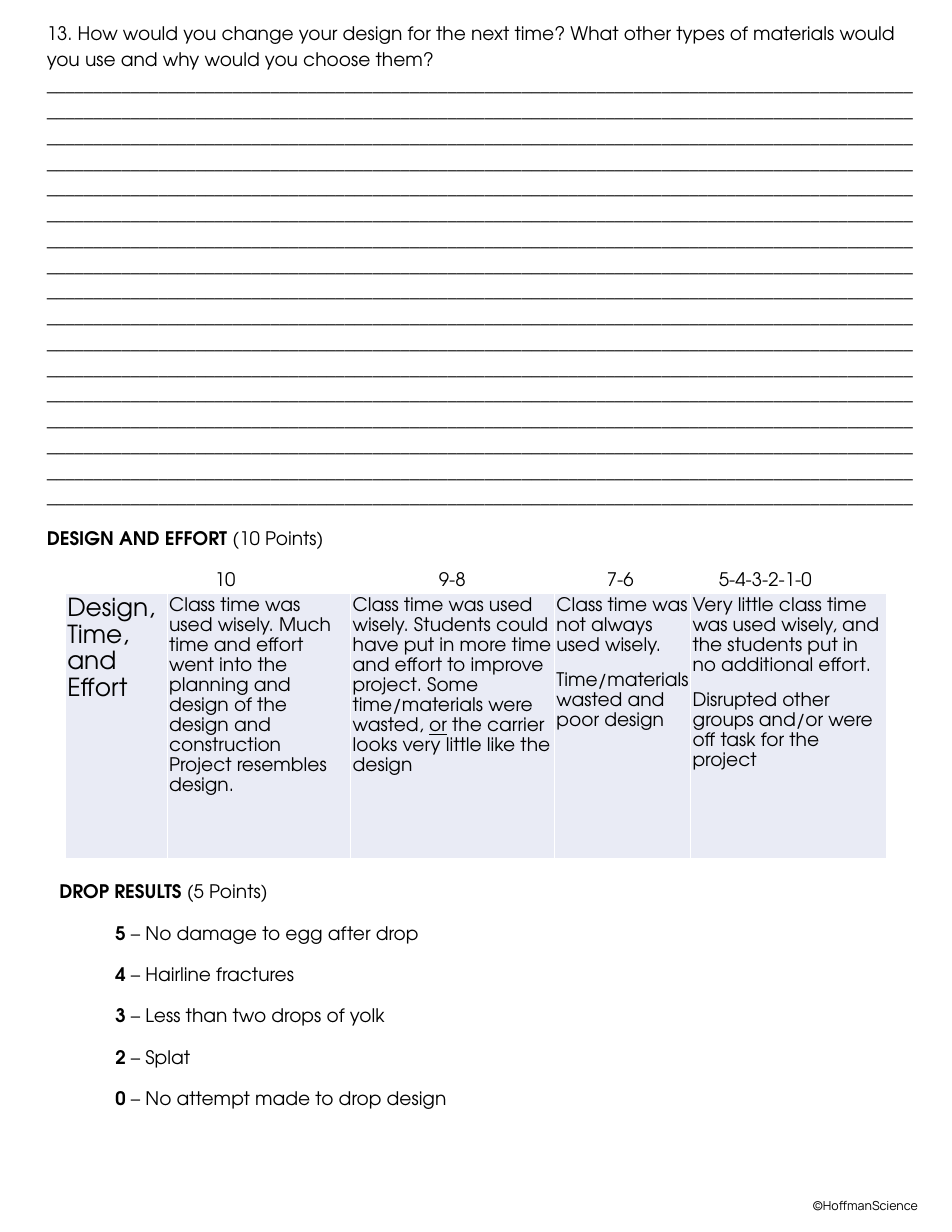
"""Build a worksheet page with a written question, an effort rubric and a drop scale."""
import pptx
import pptx.dml.color
import pptx.enum.shapes
import pptx.enum.text
import pptx.oxml
import pptx.oxml.ns
import pptx.util

Pt = pptx.util.Pt
A_NS = pptx.oxml.ns.nsdecls("a")


def color(value):
    return pptx.dml.color.RGBColor.from_string(value)


class Worksheet:
    font = "TeX Gyre Adventor"
    ink = "000000"
    paper = "FFFFFF"
    cell_fill = "E9EBF5"

    def __init__(self, width, height):
        self.prs = pptx.Presentation()
        self.prs.slide_width, self.prs.slide_height = Pt(width), Pt(height)
        self.s = self.prs.slides.add_slide(self.prs.slide_layouts[6])

    def paragraph(self, tf, runs, first=False, size=12, spacing=1.15, after=10,
                  indent=0, font=None):
        p = tf.paragraphs[0] if first else tf.add_paragraph()
        for text, style in runs:
            r = p.add_run()
            r.text = text
            if style:
                setattr(r.font, style, True)
        p.line_spacing, p.space_after = spacing, Pt(after)
        if indent:
            pPr = p._p.get_or_add_pPr()
            pPr.set("marL", str(Pt(indent)))
            pPr.set("indent", "0")
        p.font.name, p.font.size = font or self.font, Pt(size)
        p.font.color.rgb = color(self.ink)
        return p

    def text(self, x, y, w, h):
        tf = self.s.shapes.add_textbox(Pt(x), Pt(y), Pt(w), Pt(h)).text_frame
        tf.word_wrap = True
        return tf

    def label(self, x, y, w, h, text):
        sp = self.s.shapes.add_shape(
            pptx.enum.shapes.MSO_SHAPE.RECTANGLE, Pt(x), Pt(y), Pt(w), Pt(h))
        sp.shadow.inherit = False
        sp.fill.solid()
        sp.fill.fore_color.rgb = color(self.paper)
        sp.line.fill.background()
        p = self.paragraph(sp.text_frame, [(text, None)], True, 8, 1, 0, font="Manrope")
        p.alignment = pptx.enum.text.PP_ALIGN.LEFT

    def table(self, x, y, widths, height, cells):
        tbl = self.s.shapes.add_table(
            1, len(widths), Pt(x), Pt(y), Pt(sum(widths)), Pt(height)).table
        tbl.first_row = tbl.horz_banding = False
        for i, (width, (size, paragraphs)) in enumerate(zip(widths, cells)):
            tbl.columns[i].width = Pt(width)
            cell = tbl.cell(0, i)
            cell.margin_left = cell.margin_right = Pt(1.25)
            cell.margin_top = cell.margin_bottom = Pt(1.25)
            for n, runs in enumerate(paragraphs):
                self.paragraph(cell.text_frame, runs, n == 0, size)
            self.borders(cell)
            cell.fill.solid()
            cell.fill.fore_color.rgb = color(self.cell_fill)

    def borders(self, cell):
        tcPr = cell._tc.get_or_add_tcPr()
        for side in ("lnL", "lnR", "lnT", "lnB"):
            tcPr.append(pptx.oxml.parse_xml(
                f'<a:{side} {A_NS} w="{Pt(1)}"><a:solidFill>'
                f'<a:srgbClr val="{self.paper}"/></a:solidFill></a:{side}>'))


def main():
    ws = Worksheet(612, 792)
    ws.label(515.5, 766.5, 96.5, 17, "©HoffmanScience")

    answer_lines = "_" * 93 * 17
    question = ("13. How would you change your design for the next time? What other types "
                "of materials would you use and why would you choose them?  ")
    tf = ws.text(-13, 8.25, 610.5, 517)
    ws.paragraph(tf, [(question + answer_lines, None)], True, indent=36)
    ws.paragraph(tf, [("DESIGN AND EFFORT", "bold"), (" (10 Points)", None)], indent=36)
    ws.paragraph(tf, [("\t\t\t10\t\t\t\t9-8\t\t\t7-6\t\t5-4-3-2-1-0", None)], indent=36)

    ws.table(42, 381.25, (65.5, 118, 131, 87.5, 126), 170.5, [
        (16, [[("Design, Time, and Effort", None)]]),
        (12, [[("Class time was used wisely. Much time and effort went into the planning "
                "and design of the design and construction Project resembles design.", None)]]),
        (12, [[("Class time was used wisely. Students could have put in more time and effort "
                "to improve project. Some time/materials were wasted, ", None),
               ("or", "underline"),
               (" the carrier looks very little like the design", None)]]),
        (12, [[("Class time was not always used wisely.", None)],
              [("Time/materials wasted and poor design", None)]]),
        (12, [[("Very little class time was used wisely, and the students put in no "
                "additional effort.", None)],
              [("Disrupted other groups and/or were off task for the project", None)]]),
    ])

    tf = ws.text(31, 560.25, 533, 190)
    ws.paragraph(tf, [("DROP RESULTS", "bold"), (" (5 Points)", None)], True)
    for points, result in (
            ("5", "No damage to egg after drop"),
            ("4", "Hairline fractures"),
            ("3", "Less than two drops of yolk"),
            ("2", "Splat"),
            ("0", "No attempt made to drop design")):
        ws.paragraph(tf, [(points, "bold"), (f" – {result}", None)], indent=36)

    ws.prs.save("out.pptx")


if __name__ == "__main__":
    main()
